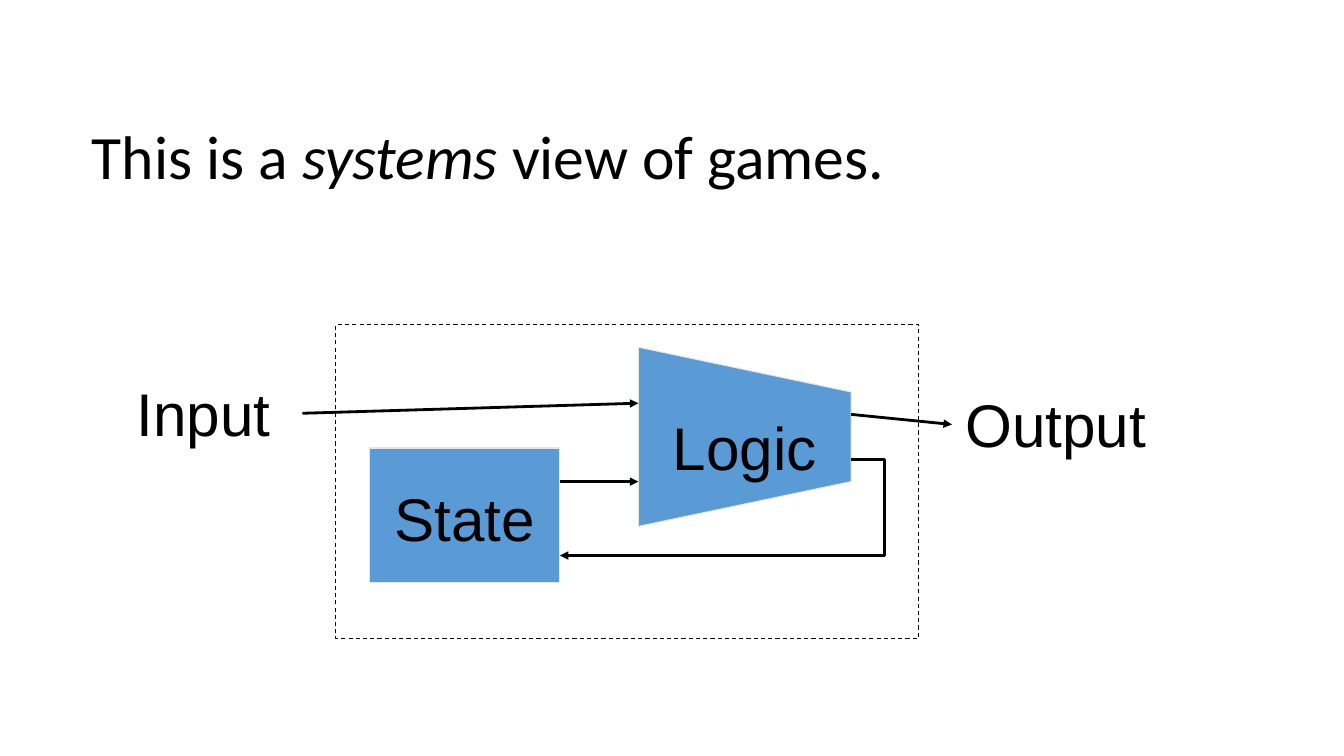
import dataclasses
import pptx
import pptx.dml.color
import pptx.enum.dml
import pptx.enum.shapes
import pptx.enum.text
import pptx.oxml
import pptx.oxml.ns
import pptx.util

PX = 10160  # 90 px to the inch
ALIGN = pptx.enum.text.PP_ALIGN
LINK = pptx.enum.shapes.MSO_CONNECTOR
RECT = pptx.enum.shapes.MSO_SHAPE.RECTANGLE


def rgb(code):
    return pptx.dml.color.RGBColor.from_string(code)


@dataclasses.dataclass(frozen=True)
class Theme:
    ink: str = "000000"
    fill: str = "5B9BD5"
    edge: str = "E7E6E6"
    head: str = "Calibri"
    body: str = "Arial"
    title: int = 44
    label: int = 43
    thin: float = 0.75
    thick: float = 2


THEME = Theme()


def emu(*sizes):
    return [size * PX for size in sizes]


def add_text(slide, box, runs, font=THEME.body, size=THEME.label,
             align=ALIGN.LEFT, space=None):
    """Write (text, italic) runs as one paragraph in a text box."""
    shape = slide.shapes.add_textbox(*emu(*box))
    frame = shape.text_frame
    frame.word_wrap = True
    frame.margin_left = frame.margin_right = 12 * PX
    frame.margin_top = frame.margin_bottom = 6 * PX
    para = frame.paragraphs[0]
    para.alignment = align
    para.line_spacing = space
    for text, slant in runs:
        run = para.add_run()
        run.text = text
        run.font.name = font
        run.font.size = pptx.util.Pt(size)
        run.font.italic = slant
        run.font.color.rgb = rgb(THEME.ink)
    return shape


def paint(shape, fill, line):
    shape.shadow.inherit = False
    if fill:
        shape.fill.solid()
        shape.fill.fore_color.rgb = rgb(fill)
    else:
        shape.fill.background()
    shape.line.color.rgb = rgb(line)
    shape.line.width = pptx.util.Pt(THEME.thin)


def add_arrow(slide, start, end, kind=LINK.STRAIGHT):
    arrow = slide.shapes.add_connector(kind, *emu(*start, *end))
    arrow.line.color.rgb = rgb(THEME.ink)
    arrow.line.width = pptx.util.Pt(THEME.thick)
    space = pptx.oxml.ns.nsdecls("a")
    arrow.line._get_or_add_ln().append(
        pptx.oxml.parse_xml(f'<a:tailEnd {space} type="triangle"/>'))
    arrow._element.spPr.append(
        pptx.oxml.parse_xml(f"<a:effectLst {space}/>"))
    return arrow


def bend(arrow, ratio):
    """Place the elbow at a share of the way from start to end."""
    geom = arrow._element.spPr.find(pptx.oxml.ns.qn("a:prstGeom"))
    for child in list(geom):
        geom.remove(child)
    space = pptx.oxml.ns.nsdecls("a")
    value = round(ratio * 100000)
    geom.append(pptx.oxml.parse_xml(
        f'<a:avLst {space}><a:gd name="adj1" fmla="val {value}"/></a:avLst>'))


def draw_title(slide, box):
    runs = [("This is a ", False), ("systems ", True),
            ("view of games.", False)]
    add_text(slide, box, runs, font=THEME.head, size=THEME.title, space=0.9)


def draw_system(slide, box):
    """Draw input, logic with state fed back, and output."""
    left, top, wide, high = box

    def at(x, y):
        return left + x, top + y

    def label(text, x, y, width, align=ALIGN.LEFT):
        return add_text(slide, (*at(x, y), width, 78), [(text, False)],
                        align=align)

    corners = [emu(*at(x, y))
               for x, y in ((460, 180), (650, 140), (650, 60), (460, 20))]
    path = slide.shapes.build_freeform(*corners[0], scale=1.0)
    path.add_line_segments(corners[1:], close=True)
    paint(path.convert_to_shape(), THEME.fill, THEME.edge)
    label("Logic", 460, 70, 190, ALIGN.CENTER)

    frame = slide.shapes.add_shape(RECT, *emu(*at(190, 0), 520, high))
    paint(frame, None, THEME.ink)
    frame.line.dash_style = pptx.enum.dml.MSO_LINE.DASH

    state = slide.shapes.add_shape(RECT, *emu(*at(220, 110), 170, 120))
    paint(state, THEME.fill, THEME.edge)
    label("State", 220, 134, 170, ALIGN.CENTER)

    source = label("Input", 0, 40, 160)
    result = label("Output", 740, 50, wide - 740)
    add_arrow(slide, at(160, 79), at(460, 70)).begin_connect(source, 3)
    add_arrow(slide, at(650, 80), at(740, 89)).end_connect(result, 1)
    add_arrow(slide, at(390, 140), at(460, 140))
    loop = add_arrow(slide, at(650, 120), at(390, 206), LINK.ELBOW)
    bend(loop, -30 / 260)


def main():
    deck = pptx.Presentation()
    deck.slide_width, deck.slide_height = emu(1200, 675)
    slide = deck.slides.add_slide(deck.slide_layouts[6])
    draw_title(slide, (70, 107, 1060, 142))
    draw_system(slide, (110, 290, 990, 280))
    deck.save("out.pptx")


if __name__ == "__main__":
    main()
